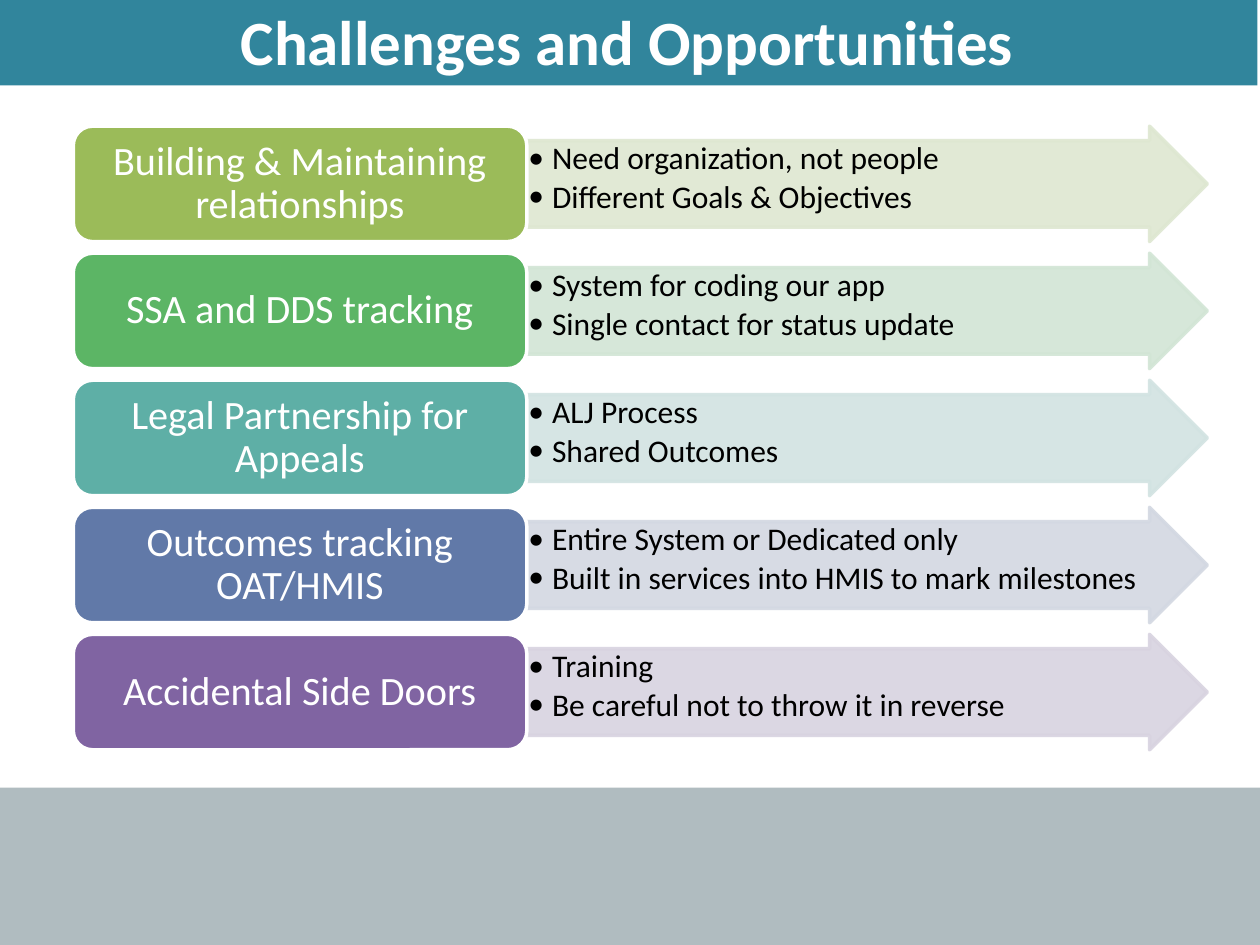
import pptx
import pptx.util
import pptx.dml.color
import pptx.enum.shapes
import pptx.enum.text
import pptx.oxml
from pptx.oxml.ns import nsdecls, qn

Pt = pptx.util.Pt
SHAPE = pptx.enum.shapes.MSO_SHAPE
ALIGN = pptx.enum.text.PP_ALIGN
ANCHOR = pptx.enum.text.MSO_ANCHOR

# Content: topic, its points, label colour, arrow colour
TITLE = "Challenges and Opportunities"
TOPICS = [
    ("Building & Maintaining relationships",
     ["Need organization, not people", "Different Goals & Objectives"], "9BBB59", "DEE7D1"),
    ("SSA and DDS tracking",
     ["System for coding our app", "Single contact for status update"], "5CB565", "D2E5D5"),
    ("Legal Partnership for Appeals",
     ["ALJ Process", "Shared Outcomes"], "5EAFA6", "D2E3E2"),
    ("Outcomes tracking OAT/HMIS",
     ["Entire System or Dedicated only", "Built in services into HMIS to mark milestones"],
     "6179A8", "D3D8E2"),
    ("Accidental Side Doors",
     ["Training", "Be careful not to throw it in reverse"], "8064A2", "D8D3E0"),
]

THEME = {
    "font": "Calibri",
    "white": "FFFFFF", "black": "000000", "banner": "31859C", "footer": "B0BCC0",
    "title_size": 36, "label_size": 23, "point_size": 18,
    "outline": 2, "arrow_opacity": 90,
}

# Layout in points
PAGE_WIDTH, PAGE_HEIGHT = 720, 540
FOOTER_HEIGHT = 90
LABEL_LEFT, LABEL_WIDTH = 41.9, 259.2
ARROW_WIDTH = 388.8
ROW_TOP, ROW_HEIGHT, ROW_STEP = 72.1, 66, 72.6
BULLET_INDENT = 13.5


def colour(name):
    return pptx.dml.color.RGBColor.from_string(name)


def set_opacity(paint, percent):
    """Make the solid colour inside a fill or line element partly transparent."""
    alpha = f'<a:alpha {nsdecls("a")} val="{percent * 1000}"/>'
    paint.find(qn("a:solidFill"))[0].append(pptx.oxml.parse_xml(alpha))


def add_bullet(para):
    """Give a paragraph a hanging bullet in the text font."""
    properties = para._p.get_or_add_pPr()
    properties.set("marL", str(Pt(BULLET_INDENT)))
    properties.set("indent", str(-Pt(BULLET_INDENT)))
    for mark in (f'buFont {nsdecls("a")} typeface="{THEME["font"]}"',
                 f'buChar {nsdecls("a")} char="•"'):
        properties.append(pptx.oxml.parse_xml(f"<a:{mark}/>"))


def add_block(page, kind, left, top, width, height, fill, line=None, opacity=None):
    block = page.shapes.add_shape(kind, Pt(left), Pt(top), Pt(width), Pt(height))
    block.shadow.inherit = False
    block.fill.solid()
    block.fill.fore_color.rgb = colour(fill)
    if line:
        block.line.color.rgb = colour(line)
        block.line.width = Pt(THEME["outline"])
    else:
        block.line.fill.background()
    if opacity:
        properties = block.fill._xPr
        set_opacity(properties, opacity)
        set_opacity(properties.find(qn("a:ln")), opacity)
    return block


def write(block, lines, size, ink, bold=False, align=ALIGN.CENTER, anchor=ANCHOR.MIDDLE,
          insets=(7.2, 3.6, 7.2, 3.6), spacing=None, after=0, bullet=False):
    """Put one paragraph per line of text into a block."""
    frame = block.text_frame
    frame.word_wrap = True
    frame.vertical_anchor = anchor
    frame.margin_left, frame.margin_top, frame.margin_right, frame.margin_bottom = map(Pt, insets)
    for number, line in enumerate(lines):
        para = frame.add_paragraph() if number else frame.paragraphs[0]
        para.alignment = align
        para.space_after = Pt(after)
        if spacing:
            para.line_spacing = spacing
        if bullet:
            add_bullet(para)
        span = para.add_run()
        span.text = line
        span.font.name = THEME["font"]
        span.font.size = Pt(size)
        span.font.bold = bold
        span.font.color.rgb = colour(ink)


def main():
    deck = pptx.Presentation()
    deck.slide_width, deck.slide_height = Pt(PAGE_WIDTH), Pt(PAGE_HEIGHT)
    page = deck.slides.add_slide(deck.slide_layouts[6])

    # Footer band
    add_block(page, SHAPE.RECTANGLE, 0, PAGE_HEIGHT - FOOTER_HEIGHT, PAGE_WIDTH, FOOTER_HEIGHT,
              THEME["footer"])

    # One row per topic: an arrow with the points, then the label
    for row, (topic, points, label_fill, arrow_fill) in enumerate(TOPICS):
        top = ROW_TOP + row * ROW_STEP
        arrow = add_block(page, SHAPE.RIGHT_ARROW, LABEL_LEFT + LABEL_WIDTH, top, ARROW_WIDTH,
                          ROW_HEIGHT, arrow_fill, arrow_fill, THEME["arrow_opacity"])
        arrow.adjustments[0], arrow.adjustments[1] = 0.75, 0.5
        write(arrow, points, THEME["point_size"], THEME["black"], align=ALIGN.LEFT,
              anchor=ANCHOR.TOP, insets=(0.9, 0.9, 0.9, 0.9), spacing=0.9, after=2.7, bullet=True)

        label = add_block(page, SHAPE.ROUNDED_RECTANGLE, LABEL_LEFT, top, LABEL_WIDTH, ROW_HEIGHT,
                          label_fill, THEME["white"])
        write(label, [topic], THEME["label_size"], THEME["white"], spacing=0.9)

    # Title banner
    banner = add_block(page, SHAPE.RECTANGLE, -1.5, -2.1, PAGE_WIDTH, 50.9, THEME["banner"])
    write(banner, [TITLE], THEME["title_size"], THEME["white"], bold=True, anchor=ANCHOR.TOP)

    deck.save("out.pptx")


if __name__ == "__main__":
    main()
